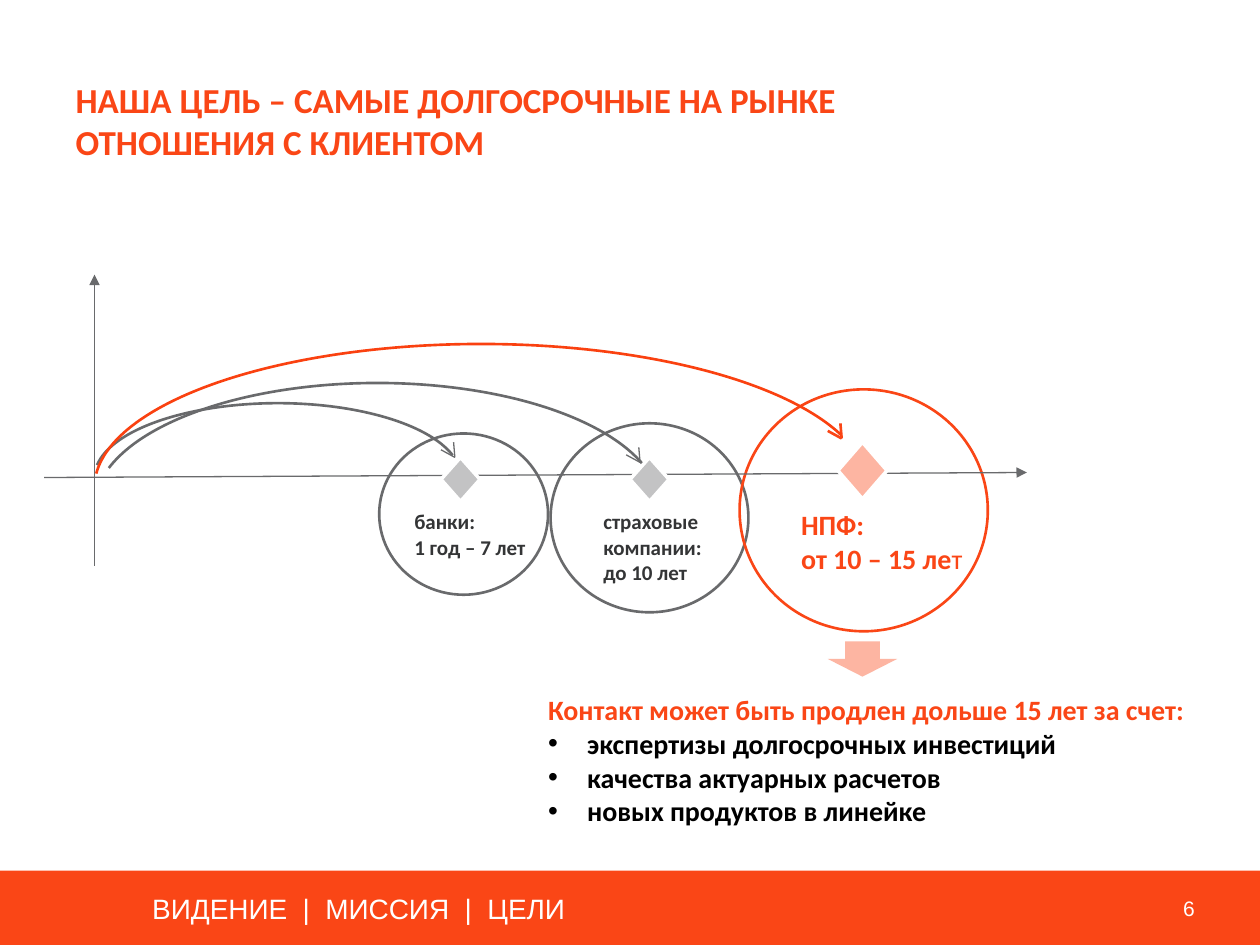
"""Build the slide on long-term client relations with a timeline of three horizons."""
import pptx
import pptx.util
import pptx.dml.color
import pptx.enum.shapes
import pptx.enum.text
import pptx.oxml
import pptx.oxml.ns
from lxml import etree

Inches, Pt = pptx.util.Inches, pptx.util.Pt
MSO = pptx.enum.shapes.MSO_SHAPE
ALIGN = pptx.enum.text.PP_ALIGN
ANCHOR = pptx.enum.text.MSO_ANCHOR
AUTO = pptx.enum.text.MSO_AUTO_SIZE

COLORS = {
    "orange": "FA4616",
    "arc": "FA4110",
    "pale": "FDB5A2",
    "gray": "696A6C",
    "silver": "C3C3C4",
    "dark": "343536",
    "black": "000000",
    "white": "FFFFFF",
}


def rgb(name):
    return pptx.dml.color.RGBColor.from_string(COLORS[name])


def sub(parent, tag, **attrs):
    return etree.SubElement(parent, pptx.oxml.ns.qn(tag), attrs)


def place(sp, box):
    sp.left, sp.top, sp.width, sp.height = [Inches(v) for v in box]


def add_run(p, text, size=12, color="dark", bold=True, font="Calibri"):
    r = p.add_run()
    r.text = text
    r.font.size, r.font.bold, r.font.name = Pt(size), bold, font
    r.font.color.rgb = rgb(color)


def add_paragraph(tf, text, bullet=None, align=ALIGN.LEFT, **fmt):
    p = tf.paragraphs[0]
    if p.runs:
        p = tf.add_paragraph()
    pPr = p._p.get_or_add_pPr()
    indent = Inches(0.31) if bullet else 0
    pPr.set("marL", str(indent))
    pPr.set("indent", str(-indent))
    if bullet:
        sub(pPr, "a:buFont", typeface="Arial")
        sub(pPr, "a:buChar", char=bullet)
    else:
        sub(pPr, "a:buNone")
    p.alignment = align
    p.space_before = Pt(0)
    add_run(p, text, **fmt)
    return p


def add_text(s, lines, box, wrap=True, **fmt):
    tf = s.shapes.add_textbox(*[Inches(v) for v in box]).text_frame
    tf.word_wrap = wrap
    tf.auto_size = AUTO.SHAPE_TO_FIT_TEXT
    for line in lines:
        p = add_paragraph(tf, line, **fmt)
    return p


def add_shape(s, kind, box, fill=None, line=None, width=1.5):
    sp = s.shapes.add_shape(kind, *[Inches(v) for v in box])
    sp.shadow.inherit = False
    if fill:
        sp.fill.solid()
        sp.fill.fore_color.rgb = rgb(fill)
    else:
        sp.fill.background()
    if line:
        sp.line.color.rgb = rgb(line)
        sp.line.width = Pt(width)
    else:
        sp.line.fill.background()
    return sp


def add_arc(s, box, angles, color):
    sp = add_shape(s, MSO.ARC, box, line=color)
    sp._element.spPr.xfrm.set("flipH", "1")
    for i, angle in enumerate(angles):
        sp.adjustments[i] = angle


def add_line(s, start, end, color="gray", width=0.75, arrow=False):
    c = s.shapes.add_connector(
        pptx.enum.shapes.MSO_CONNECTOR.STRAIGHT,
        *[Inches(v) for v in (*start, *end)])
    c.line.color.rgb = rgb(color)
    c.line.width = Pt(width)
    if arrow:
        sub(c.line._get_or_add_ln(), "a:tailEnd", type="triangle")
    sub(c._element.spPr, "a:effectLst")


def add_arrow_tip(s, x, y, color="gray", width=0.75):
    for dx, dy in ((0.11, 0.06), (0.01, 0.12)):
        add_line(s, (x, y), (x - dx, y - dy), color, width)


def add_footer(s):
    add_shape(s, MSO.RECTANGLE, (-0.01, 6.91, 10.02, 0.6), fill="orange")
    fmt = {"wrap": False, "color": "white", "bold": False, "font": "Arial"}
    add_text(s, ["ВИДЕНИЕ  |  МИССИЯ  |  ЦЕЛИ"], (1.11, 7.03, 3.52, 0.37), size=16, **fmt)
    add_text(s, ["6"], (9.17, 7.06, 0.41, 0.3), size=12, align=ALIGN.RIGHT, **fmt)


def add_title(s):
    sp = s.shapes.title
    place(sp, (0.6, 0.62, 7.55, 0.67))
    tf = sp.text_frame
    tf.margin_left = tf.margin_top = tf.margin_right = tf.margin_bottom = 0
    tf.vertical_anchor = ANCHOR.TOP
    tf.auto_size = AUTO.SHAPE_TO_FIT_TEXT
    add_paragraph(tf, "НАША ЦЕЛЬ – САМЫЕ ДОЛГОСРОЧНЫЕ НА РЫНКЕ ОТНОШЕНИЯ С КЛИЕНТОМ",
                  size=20, color="orange")


def add_reasons(s):
    sp = s.placeholders[1]
    place(sp, (4.25, 5.45, 5.47, 1.37))
    tf = sp.text_frame
    tf.auto_size = AUTO.SHAPE_TO_FIT_TEXT
    add_paragraph(tf, "Контакт может быть продлен дольше 15 лет за счет:",
                  size=16, color="orange")
    for text in ("экспертизы долгосрочных инвестиций",
                 "качества актуарных расчетов",
                 "новых продуктов в линейке"):
        add_paragraph(tf, text, bullet="•", size=16, color="black")


def add_timeline(s):
    add_arrow_tip(s, 5.08, 3.67)
    add_arrow_tip(s, 6.68, 3.48, "orange", 1.5)
    add_arrow_tip(s, 3.61, 3.63)
    for box, color in (((3.01, 3.44, 1.34, 1.28), "gray"),
                       ((4.37, 3.36, 1.57, 1.5), "gray"),
                       ((5.87, 3.09, 1.97, 1.92), "orange")):
        add_shape(s, MSO.OVAL, box, line=color)
    add_line(s, (0.35, 3.79), (8.15, 3.75), arrow=True)
    add_arc(s, (0.75, 3.04, 4.49, 1.97), (113.54, 211.03), "gray")
    add_arc(s, (0.75, 3.2, 2.91, 1.18), (112.36, 213.64), "gray")
    for box, fill in (((5, 3.63, 0.31, 0.35), "silver"),
                      ((3.5, 3.63, 0.31, 0.35), "silver"),
                      ((6.65, 3.51, 0.39, 0.45), "pale")):
        add_shape(s, MSO.DIAMOND, box, fill, "white", 2)
    add_arc(s, (0.75, 2.73, 6.14, 2.28), (113.01, 214.75), "arc")
    add_line(s, (0.75, 4.49), (0.75, 2.18), arrow=True)


def add_labels(s):
    add_text(s, ["банки:", "1 год – 7 лет"], (3.19, 3.99, 2.13, 0.5))
    add_text(s, ["страховые", "компании:", "до 10 лет"], (4.69, 3.99, 2.13, 0.71))
    fmt = {"size": 16, "color": "orange"}
    p = add_text(s, ["НПФ:", "от 10 – 15 ле"], (6.26, 3.98, 2.13, 0.88), **fmt)
    add_run(p, "т", bold=False, **fmt)
    add_shape(s, MSO.DOWN_ARROW, (6.57, 5.09, 0.55, 0.28), fill="pale")


def main():
    prs = pptx.Presentation()
    prs.slide_width, prs.slide_height = Inches(10), Inches(7.5)
    s = prs.slides.add_slide(prs.slide_layouts[1])
    add_footer(s)
    add_title(s)
    add_timeline(s)
    add_labels(s)
    add_reasons(s)
    prs.save("out.pptx")


if __name__ == "__main__":
    main()
